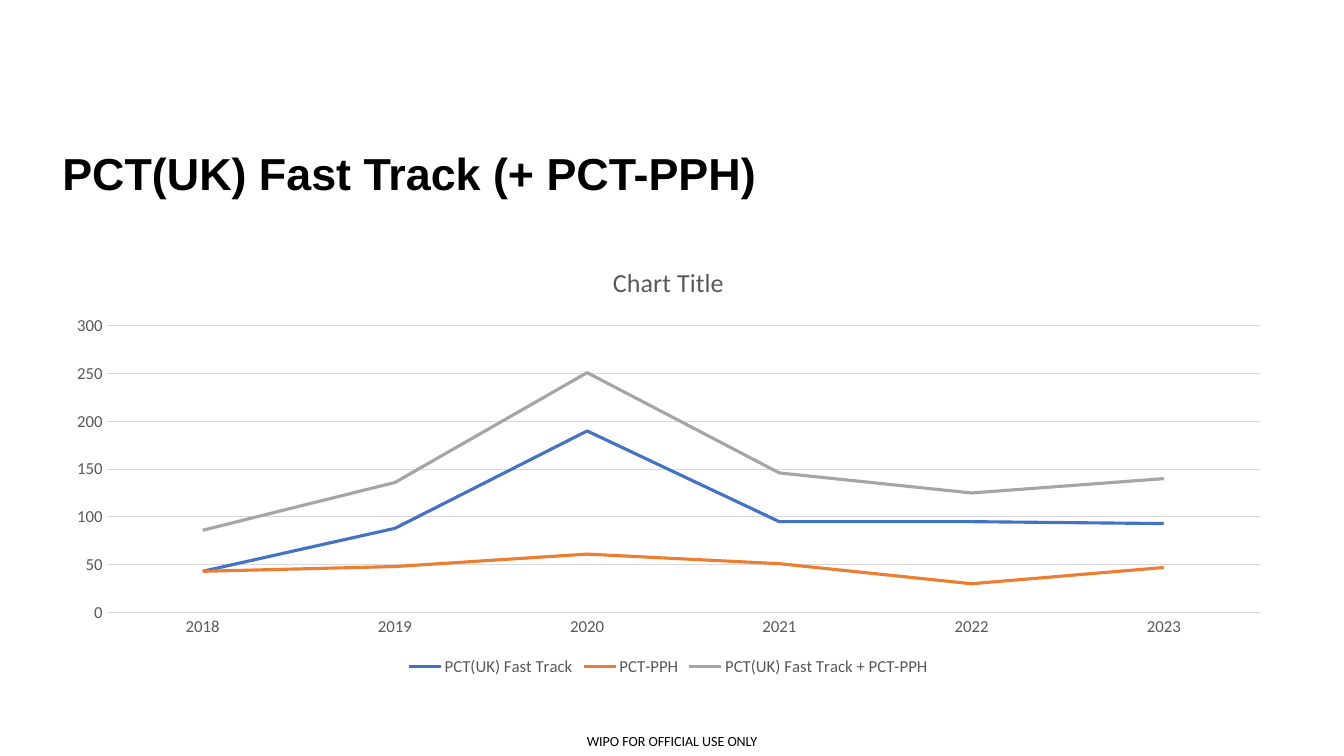
from pptx import Presentation
from pptx.chart.data import CategoryChartData
from pptx.dml.color import RGBColor
from pptx.enum.chart import XL_CHART_TYPE as ChartType, XL_LEGEND_POSITION as LegendPos
from pptx.enum.chart import XL_MARKER_STYLE as Marker, XL_TICK_MARK as Tick
from pptx.enum.text import MSO_ANCHOR as Anchor, PP_ALIGN as Align
from pptx.util import Inches, Pt

# Content
TITLE = "PCT(UK) Fast Track (+ PCT-PPH)"
FOOTER = "WIPO FOR OFFICIAL USE ONLY"
CHART_TITLE = "Chart Title"
YEARS = ["2018", "2019", "2020", "2021", "2022", "2023"]
SERIES = [
    ("PCT(UK) Fast Track", "blue", (43, 88, 190, 95, 95, 93)),
    ("PCT-PPH", "orange", (43, 48, 61, 51, 30, 47)),
    ("PCT(UK) Fast Track + PCT-PPH", "gray", (86, 136, 251, 146, 125, 140)),
]
COLORS = {
    "black": "000000", "label": "595959", "grid": "D9D9D9",
    "blue": "4472C4", "orange": "ED7D31", "gray": "A5A5A5",
}
LEFT, WIDTH = 0.52, 12.22


def rgb(name):
    return RGBColor.from_string(COLORS[name])


def set_font(font, size, color="label", name="Calibri", bold=False):
    font.size, font.name, font.bold = Pt(size), name, bold
    font.color.rgb = rgb(color)


def set_line(line, color, width):
    line.color.rgb = rgb(color)
    line.width = Pt(width)


def add_text(slide, text, box, size, name="Calibri", bold=False,
             align=Align.LEFT, inset=(0.1, 0.05), spacing=1.0, wrap=True):
    tf = slide.shapes.add_textbox(*map(Inches, box)).text_frame
    tf.word_wrap = wrap
    tf.vertical_anchor = Anchor.MIDDLE
    tf.margin_left = tf.margin_right = Inches(inset[0])
    tf.margin_top = tf.margin_bottom = Inches(inset[1])
    p = tf.paragraphs[0]
    p.alignment, p.line_spacing = align, spacing
    r = p.add_run()
    r.text = text
    set_font(r.font, size, "black", name, bold)


def add_line_chart(slide, box):
    data = CategoryChartData()
    data.categories = YEARS
    for name, _, values in SERIES:
        data.add_series(name, values)
    chart = slide.shapes.add_chart(ChartType.LINE, *map(Inches, box), data).chart
    set_font(chart.font, 10, "black")

    # Chart title and legend
    chart.has_title = True
    p = chart.chart_title.text_frame.paragraphs[0]
    r = p.add_run()
    r.text = CHART_TITLE
    set_font(r.font, 18.6)
    chart.chart_title.include_in_layout = False
    chart.has_legend = True
    chart.legend.position = LegendPos.BOTTOM
    chart.legend.include_in_layout = False
    set_font(chart.legend.font, 12)

    # Axes
    years, counts = chart.category_axis, chart.value_axis
    for axis in (years, counts):
        axis.major_tick_mark = axis.minor_tick_mark = Tick.NONE
        set_font(axis.tick_labels.font, 12)
    set_line(years.format.line, "grid", 0.75)
    counts.format.line.fill.background()
    counts.minimum_scale, counts.maximum_scale, counts.major_unit = 0, 300, 50
    counts.has_major_gridlines = True
    set_line(counts.major_gridlines.format.line, "grid", 0.75)

    # Series
    plot = chart.plots[0]
    plot.vary_by_categories = False
    for series, (_, color, _) in zip(plot.series, SERIES):
        series.smooth = False
        series.marker.style = Marker.NONE
        set_line(series.format.line, color, 2.25)


def main():
    prs = Presentation()
    prs.slide_width, prs.slide_height = Inches(13.33), Inches(7.5)
    s = prs.slides.add_slide(prs.slide_layouts[6])
    add_text(s, FOOTER, (5.64, 7.21, 2.05, 0.29), 10,
             align=Align.CENTER, inset=(0, 0), wrap=False)
    add_text(s, TITLE, (LEFT, 1.4, WIDTH, 0.7), 32, "Arial", True, spacing=0.9)
    add_line_chart(s, (LEFT, 2.43, WIDTH, 4.32))
    prs.save("out.pptx")


if __name__ == "__main__":
    main()
